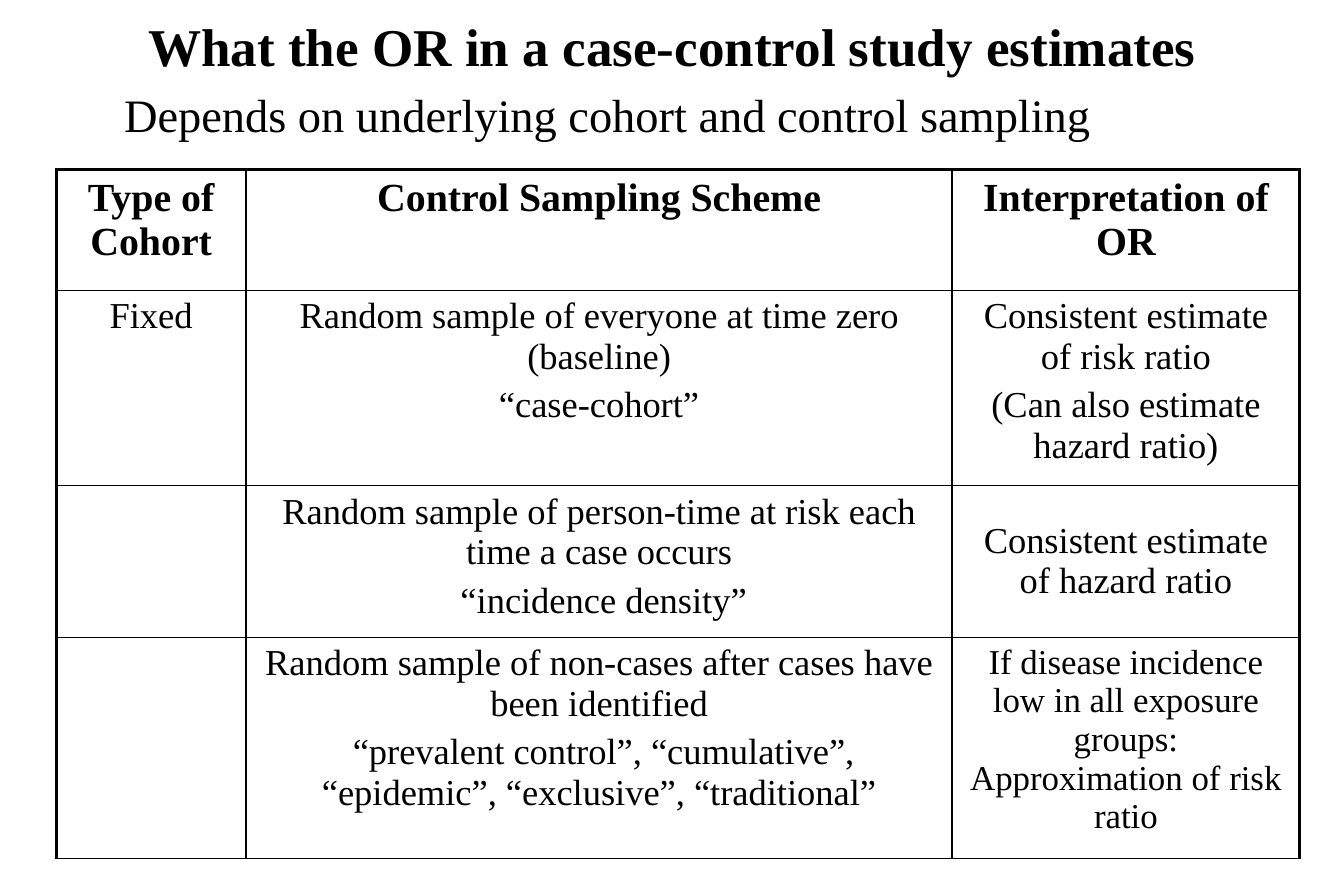
import dataclasses

import lxml.etree
import pptx
import pptx.dml.color
import pptx.enum.text
import pptx.oxml.ns
import pptx.util

PX = 9144
ALIGN = pptx.enum.text.PP_ALIGN
ANCHOR = pptx.enum.text.MSO_ANCHOR


@dataclasses.dataclass(frozen=True)
class Theme:
    """Colours, typeface and type sizes of the slide."""

    font: str = "Times New Roman"
    ink: str = "000000"
    title: int = 32
    subtitle: int = 28
    header: int = 24
    body: int = 22
    small: int = 21
    para_gap: int = 5
    thin: float = 1
    thick: float = 2.25


THEME = Theme()
COLUMNS = (159, 591, 291)
ROW_HEIGHTS = (101, 151, 118, 171)
ROWS = (
    ("Type of Cohort", "Control Sampling Scheme", "Interpretation of OR"),
    (
        "Fixed",
        "Random sample of everyone at time zero (baseline)\n“case-cohort”",
        "Consistent estimate of risk ratio\n(Can also estimate hazard ratio)",
    ),
    (
        "",
        "Random sample of person-time at risk each time a case occurs\n “incidence density”",
        "Consistent estimate of hazard ratio",
    ),
    (
        "",
        "Random sample of non-cases after cases have been identified\n"
        " “prevalent control”, “cumulative”, “epidemic”, “exclusive”, “traditional”",
        "If disease incidence low in all exposure groups:\vApproximation of risk ratio",
    ),
)


def px(*lengths):
    """Turn px lengths into EMU."""
    return [pptx.util.Emu(length * PX) for length in lengths]


def style(para, size, bold=False, align=ALIGN.CENTER):
    """Set the font and alignment of a paragraph."""
    para.alignment = align
    para.font.name = THEME.font
    para.font.size = pptx.util.Pt(size)
    para.font.bold = bold
    para.font.color.rgb = pptx.dml.color.RGBColor.from_string(THEME.ink)


def add_heading(page, box, text, size, bold, align, anchor):
    """Place one line of heading text in a box."""
    frame = page.shapes.add_textbox(*px(*box)).text_frame
    frame.word_wrap = True
    frame.vertical_anchor = anchor
    frame.text = text
    style(frame.paragraphs[0], size, bold, align)


def add_border(cell, side, width):
    """Draw one edge of a table cell."""
    name = pptx.oxml.ns.qn
    properties = cell._tc.get_or_add_tcPr()
    line = lxml.etree.SubElement(properties, name("a:ln" + side), w=str(pptx.util.Pt(width)))
    fill = lxml.etree.SubElement(line, name("a:solidFill"))
    lxml.etree.SubElement(fill, name("a:srgbClr"), val=THEME.ink)


def fill_cell(cell, text, size, bold, anchor):
    """Write the paragraphs of one table cell."""
    cell.margin_left, cell.margin_right, cell.margin_top, cell.margin_bottom = px(11, 11, 5, 5)
    cell.vertical_anchor = anchor
    cell.text = text
    for para in cell.text_frame.paragraphs:
        style(para, size, bold)
        para.space_before = pptx.util.Pt(THEME.para_gap)


def add_sampling_table(page, box):
    """Place the table of sampling schemes in a box."""
    table = page.shapes.add_table(len(ROWS), len(COLUMNS), *px(*box)).table
    table.first_row = table.horz_banding = False
    for column, width in zip(table.columns, px(*COLUMNS)):
        column.width = width
    for row, height in zip(table.rows, px(*ROW_HEIGHTS)):
        row.height = height
    last_row, last_column = len(ROWS) - 1, len(COLUMNS) - 1
    for r, texts in enumerate(ROWS):
        for c, text in enumerate(texts):
            cell = table.cell(r, c)
            size = THEME.header if r == 0 else THEME.body
            if (r, c) == (last_row, last_column):
                size = THEME.small
            anchor = ANCHOR.MIDDLE if (r, c) == (2, last_column) else ANCHOR.TOP
            fill_cell(cell, text, size, r == 0, anchor)
            outer = {"L": c == 0, "R": c == last_column, "T": r == 0, "B": False}
            for side, is_outer in outer.items():
                add_border(cell, side, THEME.thick if is_outer else THEME.thin)
            cell.fill.background()


def main():
    """Build and save the slide."""
    deck = pptx.Presentation()
    deck.slide_width, deck.slide_height = px(1125, 750)
    page = deck.slides.add_slide(deck.slide_layouts[6])
    add_heading(
        page, (38, -25, 1050, 125), "What the OR in a case-control study estimates",
        THEME.title, True, ALIGN.CENTER, ANCHOR.MIDDLE,
    )
    add_heading(
        page, (94, 67, 966, 58), "Depends on underlying cohort and control sampling",
        THEME.subtitle, False, ALIGN.LEFT, ANCHOR.TOP,
    )
    add_sampling_table(page, (47, 142, sum(COLUMNS), sum(ROW_HEIGHTS)))
    deck.save("out.pptx")


if __name__ == "__main__":
    main()
